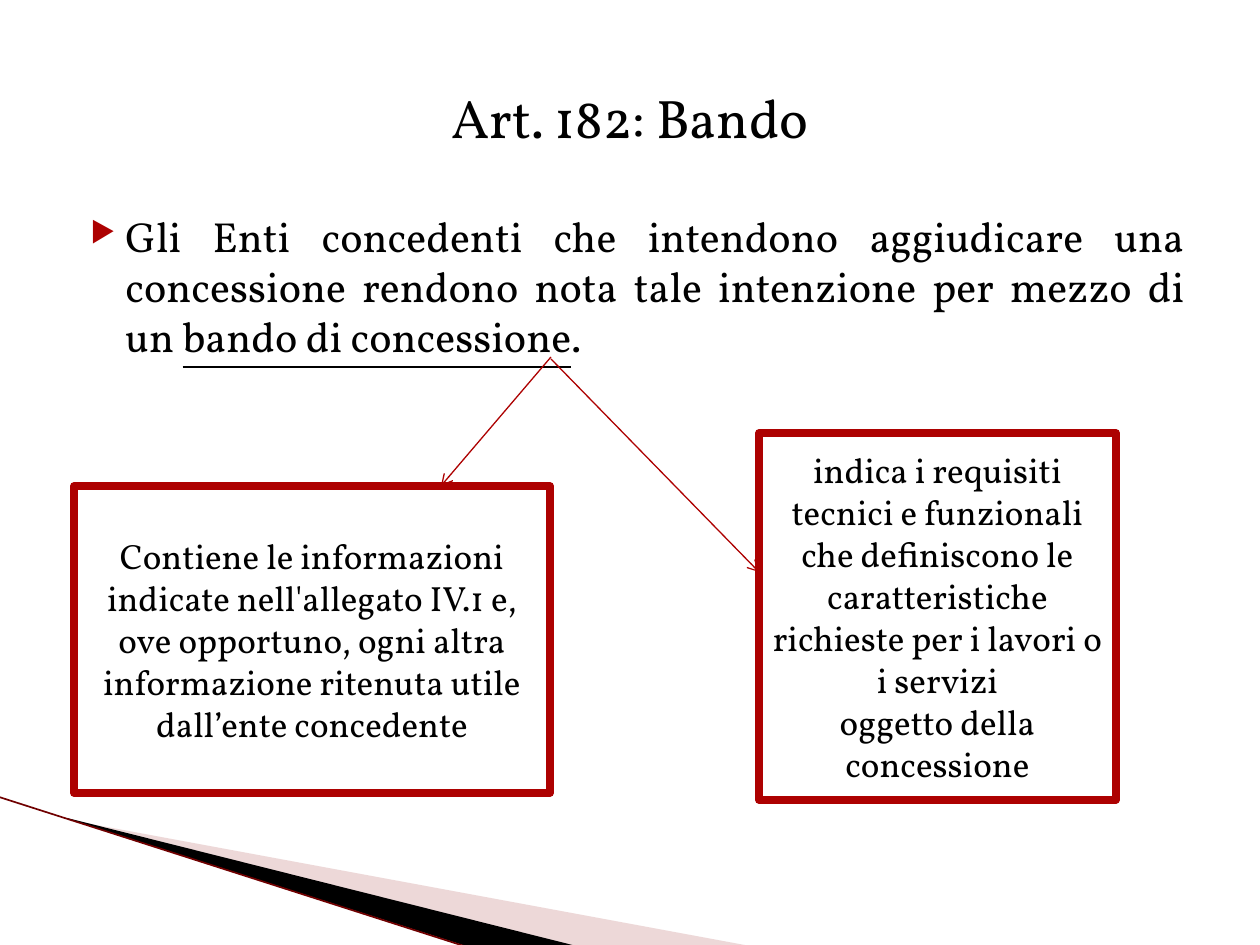
from lxml import etree
from pptx import Presentation
from pptx.dml.color import RGBColor
from pptx.enum.shapes import MSO_CONNECTOR as Connector, MSO_SHAPE as Shape
from pptx.enum.text import MSO_ANCHOR as Anchor, PP_ALIGN as Align
from pptx.oxml.ns import qn
from pptx.util import Pt

PX = 914400 // 126
BLACK = RGBColor(0, 0, 0)
WHITE = RGBColor(255, 255, 255)
RED = RGBColor(0xAD, 0x01, 0x01)
DARK_RED = RGBColor(0x70, 0, 0)
ROSE = RGBColor(0xD2, 0x9E, 0x9E)
FONT = "Vollkorn"

TITLE = ["Art. 182: Bando"]
INTRO = [
    ("Gli Enti concedenti che intendono aggiudicare una concessione rendono nota "
     "tale intenzione per mezzo di un ", False),
    ("bando di concessione", True),
    (". ", False),
]
BOXES = [
    ((74, 486, 476, 307),
     ["Contiene le informazioni indicate nell'allegato IV.1 e, ove opportuno, "
      "ogni altra informazione ritenuta utile dall’ente concedente"]),
    ((759, 433, 357, 367),
     ["indica i requisiti tecnici e funzionali che definiscono le caratteristiche "
      "richieste per i lavori o i servizi",
      "oggetto della concessione"]),
]
ARROWS = [((551, 359), (759, 572)), ((551, 357), (441, 486))]
WEDGES = [
    ([(69, 820), (750, 946), (575, 946), (69, 819)], ROSE, 40),
    ([(67, 818), (576, 946), (469, 947), (68, 819)], BLACK, None),
]
EDGE = ((-1, 797), (467, 947))


def px(*lengths):
    return [length * PX for length in lengths]


def set_font(paragraph, size):
    for key, value in {"name": FONT, "size": Pt(size)}.items():
        setattr(paragraph.font, key, value)
    paragraph.font.color.rgb = BLACK


def write(frame, texts, size):
    frame.word_wrap = True
    frame.vertical_anchor = Anchor.MIDDLE
    for index, text in enumerate(texts):
        paragraph = frame.add_paragraph() if index else frame.paragraphs[0]
        paragraph.text = text
        paragraph.alignment = Align.CENTER
        set_font(paragraph, size)


def add_line(start, end, color, width, arrow=False):
    line = slide.shapes.add_connector(Connector.STRAIGHT, *px(*start, *end))
    line.line.color.rgb = color
    line.line.width = Pt(width)
    if arrow:
        etree.SubElement(line.line._get_or_add_ln(), qn("a:tailEnd"), type="arrow")
    etree.SubElement(line._element.spPr, qn("a:effectLst"))


def add_wedge(points, color, opacity):
    builder = slide.shapes.build_freeform(*points[0], scale=PX)
    builder.add_line_segments(points[1:], close=True)
    wedge = builder.convert_to_shape()
    wedge.shadow.inherit = False
    wedge.fill.solid()
    wedge.fill.fore_color.rgb = color
    wedge.line.fill.background()
    if opacity:
        tone = wedge._element.spPr.find(".//" + qn("a:srgbClr"))
        etree.SubElement(tone, qn("a:alpha"), val=str(opacity * 1000))


def add_intro():
    frame = slide.shapes.add_textbox(*px(63, 204, 1134, 624)).text_frame
    frame.word_wrap = True
    paragraph = frame.paragraphs[0]
    paragraph.alignment = Align.JUSTIFY
    props = paragraph._p.get_or_add_pPr()
    for key, value in {"marL": 50 * PX, "indent": -35 * PX}.items():
        props.set(key, str(value))
    bullet_color = etree.SubElement(props, qn("a:buClr"))
    etree.SubElement(bullet_color, qn("a:srgbClr"), val=str(RED))
    etree.SubElement(props, qn("a:buSzPct"), val="68000")
    etree.SubElement(props, qn("a:buChar"), char="▶")
    set_font(paragraph, 24)
    for text, underlined in INTRO:
        run = paragraph.add_run()
        run.text = text
        run.font.underline = underlined


def add_box(place, texts):
    box = slide.shapes.add_shape(Shape.RECTANGLE, *px(*place))
    box.shadow.inherit = False
    box.fill.solid()
    box.fill.fore_color.rgb = WHITE
    box.line.color.rgb = RED
    box.line.width = Pt(4.33)
    etree.SubElement(box.line._get_or_add_ln(), qn("a:round"))
    write(box.text_frame, texts, 20)


deck = Presentation()
deck.slide_width, deck.slide_height = px(1260, 945)
slide = deck.slides.add_slide(deck.slide_layouts[6])

for wedge in WEDGES:
    add_wedge(*wedge)
add_line(*EDGE, DARK_RED, 0.95)
add_intro()
write(slide.shapes.add_textbox(*px(63, 38, 1134, 158)).text_frame, TITLE, 31)
for box in BOXES:
    add_box(*box)
for start, end in ARROWS:
    add_line(start, end, RED, 0.75, arrow=True)

deck.save("out.pptx")
